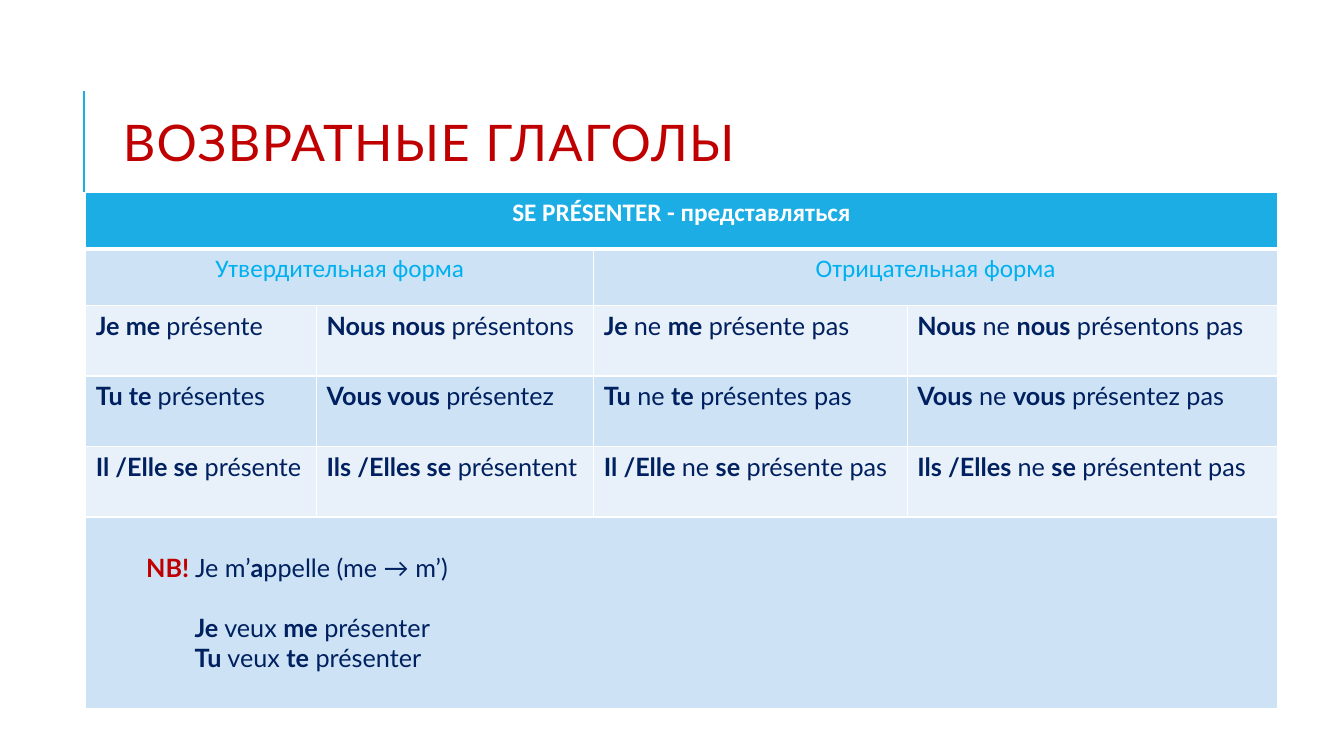
from dataclasses import dataclass

from lxml.etree import SubElement
from pptx import Presentation
from pptx.dml.color import RGBColor
from pptx.enum.shapes import MSO_CONNECTOR as Connector
from pptx.enum.text import MSO_ANCHOR as Anchor, PP_ALIGN as Align
from pptx.oxml.ns import qn
from pptx.util import Inches, Pt

WHITE = RGBColor(0xFF, 0xFF, 0xFF)
BLUE = RGBColor(0x1C, 0xAD, 0xE4)
SKY = RGBColor(0x00, 0xB0, 0xF0)
NAVY = RGBColor(0x00, 0x20, 0x60)
RED = RGBColor(0xC0, 0x00, 0x00)
BAND_DARK = RGBColor(0xCD, 0xE3, 0xF5)
BAND_LIGHT = RGBColor(0xE8, 0xF1, 0xFA)

COLUMN_WIDTHS = (2.29, 2.75, 3.11, 3.67)
ROW_HEIGHTS = (0.56, 0.56, 0.7, 0.7, 0.7, 1.9)
LAST_COLUMN = len(COLUMN_WIDTHS) - 1
NOTE_ROW = len(ROW_HEIGHTS) - 1
BLANK_LINE = 21.6


@dataclass
class Heading:
    row: int
    first: int
    last: int
    text: str
    color: RGBColor


@dataclass
class Note:
    text: str
    indent: float
    before: float = 0


HEADINGS = (
    Heading(0, 0, LAST_COLUMN, "*SE PRÉSENTER - представляться*", WHITE),
    Heading(1, 0, 1, "Утвердительная форма", SKY),
    Heading(1, 2, LAST_COLUMN, "Отрицательная форма", SKY),
)
CONJUGATION = (
    ("*Je me *présente", "*Nous nous *présentons",
     "*Je *ne *me* présente pas", "*Nous* ne *nous* présentons pas"),
    ("*Tu te *présentes", "*Vous vous *présentez",
     "*Tu* ne *te* présentes pas", "*Vous* ne *vous* présentez pas"),
    ("*Il /Elle se* présente", "*Ils /Elles se* présentent",
     "*Il /Elle *ne *se* présente pas", "*Ils /Elles *ne *se* présentent pas"),
)
NOTES = (
    Note("*NB!* Je m’*a*ppelle (me → m’)", 0.5),
    Note("*Je* veux *me* présenter", 0.98, BLANK_LINE),
    Note("*Tu* veux *te* présenter", 0.98),
)


def write(para, text: str, font: str, color: RGBColor) -> None:
    """Fill a paragraph; words between asterisks are bold."""
    para.font.name = font
    para.font.size = Pt(18)
    para.font.color.rgb = color
    for index, part in enumerate(text.split("*")):
        if part:
            span = para.add_run()
            span.text = part
            span.font.bold = index % 2 == 1


def style_cell(cell, row: int) -> None:
    properties = cell._tc.get_or_add_tcPr()
    for side in ("lnL", "lnR", "lnT", "lnB"):
        thick = (row, side) in ((0, "lnB"), (1, "lnT"))
        border = SubElement(properties, qn(f"a:{side}"), w=str(Pt(3 if thick else 1)))
        fill = SubElement(border, qn("a:solidFill"))
        SubElement(fill, qn("a:srgbClr"), val=str(WHITE))
    cell.fill.solid()
    cell.fill.fore_color.rgb = BLUE if row == 0 else BAND_DARK if row % 2 else BAND_LIGHT


def add_title(page) -> None:
    rule = page.shapes.add_connector(
        Connector.STRAIGHT, Inches(0.83), Inches(1.9), Inches(0.83), Inches(0.9))
    rule.line.color.rgb = BLUE
    rule.line.width = Pt(1.5)
    SubElement(rule._element.spPr, qn("a:effectLst"))

    box = page.shapes.add_textbox(Inches(1.12), Inches(0.64), Inches(10.63), Inches(1.64))
    box.text_frame.word_wrap = True
    box.text_frame.vertical_anchor = Anchor.MIDDLE
    para = box.text_frame.paragraphs[0]
    para.line_spacing = 0.8
    para.font.name = "Lato"
    para.font.size = Pt(36)
    para.font.color.rgb = RED
    span = para.add_run()
    span.text = "ВОЗВРАТНЫЕ ГЛАГОЛЫ"
    span.font._element.set("spc", "100")


def add_verb_table(page) -> None:
    table = page.shapes.add_table(
        len(ROW_HEIGHTS), len(COLUMN_WIDTHS), Inches(0.85), Inches(1.91),
        Inches(sum(COLUMN_WIDTHS)), Inches(sum(ROW_HEIGHTS))).table
    table.first_row = False
    table.horz_banding = False
    for column, width in zip(table.columns, COLUMN_WIDTHS):
        column.width = Inches(width)
    for row, height in enumerate(ROW_HEIGHTS):
        table.rows[row].height = Inches(height)
        for cell in table.rows[row].cells:
            style_cell(cell, row)

    for heading in HEADINGS:
        cell = table.cell(heading.row, heading.first)
        cell.merge(table.cell(heading.row, heading.last))
        para = cell.text_frame.paragraphs[0]
        para.alignment = Align.CENTER
        write(para, heading.text, "Calibri", heading.color)

    for row, forms in enumerate(CONJUGATION, start=2):
        for column, form in enumerate(forms):
            write(table.cell(row, column).text_frame.paragraphs[0], form, "Lato", NAVY)

    cell = table.cell(NOTE_ROW, 0)
    cell.merge(table.cell(NOTE_ROW, LAST_COLUMN))
    cell.margin_top = Inches(0.35)
    frame = cell.text_frame
    for index, note in enumerate(NOTES):
        para = frame.add_paragraph() if index else frame.paragraphs[0]
        para.space_before = Pt(note.before)
        write(para, note.text, "Lato", NAVY)
        layout = para._p.get_or_add_pPr()
        layout.set("marL", str(Inches(note.indent)))
        layout.set("indent", "0")
    frame.paragraphs[0].runs[0].font.color.rgb = RED


def main() -> None:
    deck = Presentation()
    deck.slide_width = Inches(13.33)
    deck.slide_height = Inches(7.5)
    page = deck.slides.add_slide(deck.slide_layouts[6])
    add_title(page)
    add_verb_table(page)
    deck.save("out.pptx")


if __name__ == "__main__":
    main()
